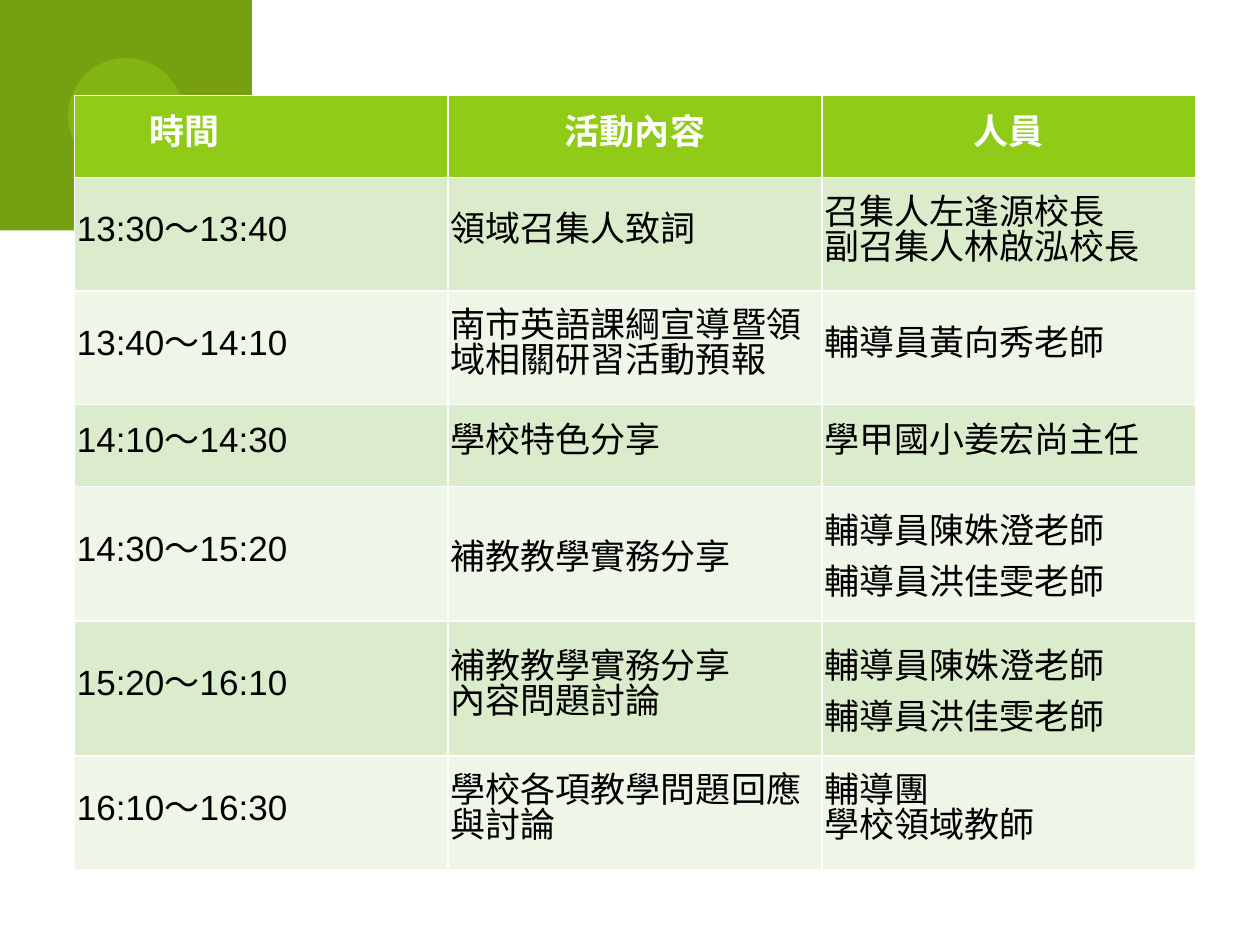
"""Builds the workshop agenda slide: a timetable over a green corner ornament."""
from lxml import etree
from pptx import Presentation
from pptx.dml.color import RGBColor
from pptx.enum.shapes import MSO_SHAPE
from pptx.enum.text import MSO_ANCHOR, PP_ALIGN
from pptx.oxml.ns import qn
from pptx.util import Inches, Pt

RECTANGLE, OVAL = MSO_SHAPE.RECTANGLE, MSO_SHAPE.OVAL
MIDDLE, CENTER, LEFT = MSO_ANCHOR.MIDDLE, PP_ALIGN.CENTER, PP_ALIGN.LEFT

HEADINGS = ("時間", "活動內容", "人員")
SESSIONS = [
    ("13:30～13:40", "領域召集人致詞", "召集人左逢源校長\n副召集人林啟泓校長"),
    ("13:40～14:10", "南市英語課綱宣導暨領域相關研習活動預報", "輔導員黃向秀老師"),
    ("14:10～14:30", "學校特色分享", "學甲國小姜宏尚主任"),
    ("14:30～15:20", "補教教學實務分享", "輔導員陳姝澄老師\n輔導員洪佳雯老師"),
    ("15:20～16:10", "補教教學實務分享\n內容問題討論", "輔導員陳姝澄老師\n輔導員洪佳雯老師"),
    ("16:10～16:30", "學校各項教學問題回應與討論", "輔導團\n學校領域教師"),
]
NATURAL_SPACING = {(4, 1), (4, 2), (5, 2)}
ROW_HEIGHTS = (0.65, 0.9, 0.9, 0.65, 1.07, 1.07, 0.9)
TABLE_LEFT, TABLE_TOP, TABLE_WIDTH = 0.59, 0.76, 8.9
CORNER = [
    (RECTANGLE, (0, 0, 2, 1.83), "corner", None),
    (OVAL, (0.54, 0.46, 0.92, 0.92), "header", 50),
]
COLORS = {"corner": "769F11", "header": "8FCB17", "odd": "DBECCC",
          "even": "EEF6E8", "heading": "FFFFFF", "body": "000000"}
FONT, TEXT_SIZE = "Arial", Pt(20)


def paint(fill, color):
    fill.solid()
    fill.fore_color.rgb = RGBColor.from_string(COLORS[color])


def add_corner(slide):
    for kind, box, color, opacity in CORNER:
        ornament = slide.shapes.add_shape(kind, *map(Inches, box))
        ornament.shadow.inherit = False
        ornament.line.fill.background()
        paint(ornament.fill, color)
        if opacity:
            tint = next(ornament.element.spPr.iter(qn("a:srgbClr")))
            etree.SubElement(tint, qn("a:alpha"), val=str(opacity * 1000))


def fill_cell(cell, text, row, column):
    is_heading = row == 0
    paint(cell.fill, "header" if is_heading else "odd" if row % 2 else "even")
    cell.vertical_anchor = MIDDLE
    cell.margin_left = cell.margin_right = Inches(0.02)
    cell.margin_top = cell.margin_bottom = 0
    cell.text_frame.text = text
    for paragraph in cell.text_frame.paragraphs:
        paragraph.alignment = CENTER if is_heading and column else LEFT
        if (row, column) not in NATURAL_SPACING:
            paragraph.line_spacing = TEXT_SIZE
        if is_heading and column == 0:
            paragraph._p.get_or_add_pPr().set("indent", str(Inches(0.58)))
        for run in paragraph.runs:
            run.font.name, run.font.size, run.font.bold = FONT, TEXT_SIZE, is_heading
            paint(run.font.fill, "heading" if is_heading else "body")


def add_agenda(slide):
    rows = [HEADINGS, *SESSIONS]
    box = (TABLE_LEFT, TABLE_TOP, TABLE_WIDTH, sum(ROW_HEIGHTS))
    agenda = slide.shapes.add_table(len(rows), len(HEADINGS), *map(Inches, box)).table
    for row, (texts, height) in enumerate(zip(rows, ROW_HEIGHTS)):
        agenda.rows[row].height = Inches(height)
        for column, text in enumerate(texts):
            fill_cell(agenda.cell(row, column), text, row, column)


def main():
    deck = Presentation()
    deck.slide_width, deck.slide_height = Inches(10), Inches(7.5)
    slide = deck.slides.add_slide(deck.slide_layouts[6])
    add_corner(slide)
    add_agenda(slide)
    deck.save("out.pptx")


if __name__ == "__main__":
    main()
